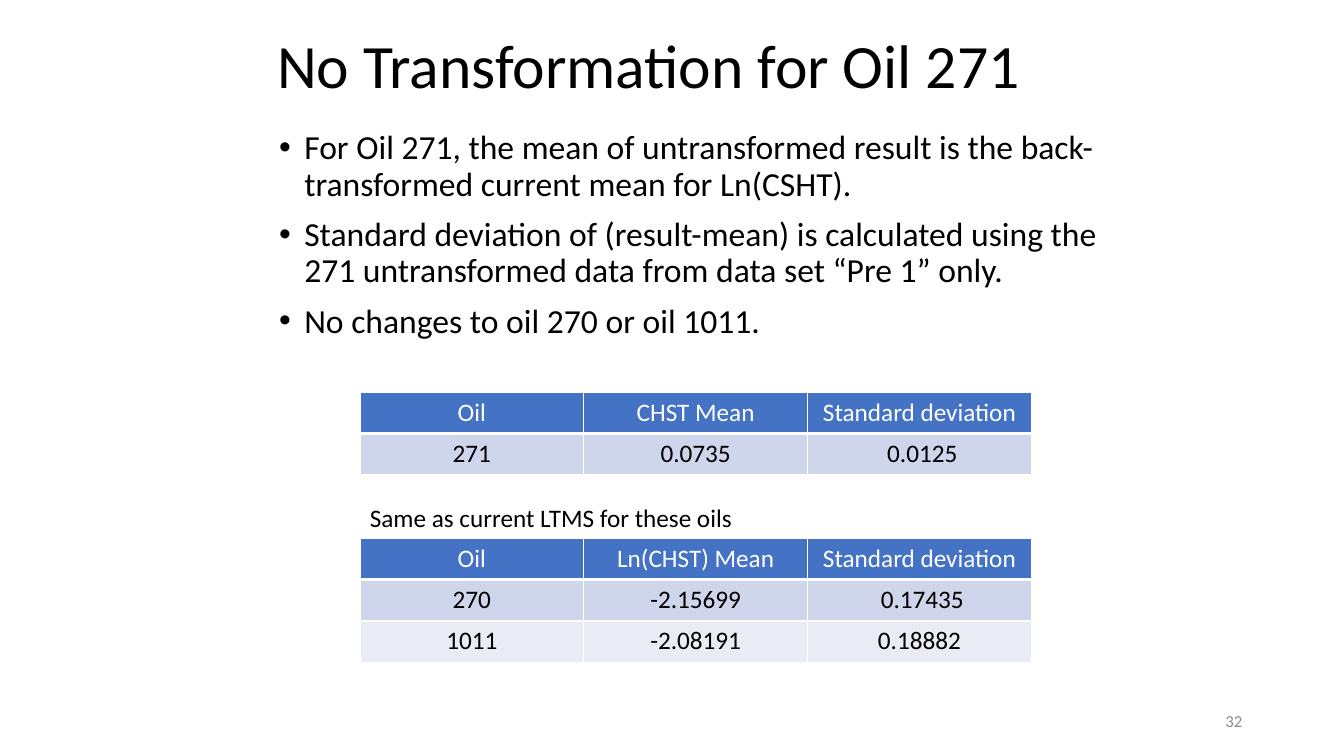
"""Build the slide on using no transformation for Oil 271."""
from lxml.etree import SubElement
from pptx import Presentation
from pptx.dml.color import RGBColor
from pptx.enum.text import MSO_ANCHOR, PP_ALIGN
from pptx.oxml.ns import qn
from pptx.util import Inches, Pt

BLACK, WHITE, GRAY = "000000", "FFFFFF", "8C8C8C"
HEADER_FILL, BAND_FILLS = "4472C4", ("CFD5EA", "E9EBF5")
TABLE_LEFT, COLUMN_WIDTH, ROW_HEIGHT = 3.57, 2.22, 0.41


def style_text(text_frame, size, color, alignment=PP_ALIGN.LEFT):
    for paragraph in text_frame.paragraphs:
        paragraph.alignment = alignment
        for run in paragraph.runs:
            run.font.name = "Calibri"
            run.font.size = Pt(size)
            run.font.bold = False
            run.font.color.rgb = RGBColor.from_string(color)


def add_text(slide, text, box, size, color=BLACK, alignment=PP_ALIGN.LEFT, anchor=MSO_ANCHOR.TOP):
    text_frame = slide.shapes.add_textbox(*map(Inches, box)).text_frame
    text_frame.word_wrap = True
    text_frame.vertical_anchor = anchor
    text_frame.text = text
    style_text(text_frame, size, color, alignment)
    return text_frame


presentation = Presentation()
presentation.slide_width = Inches(13.33)
presentation.slide_height = Inches(7.5)
slide = presentation.slides.add_slide(presentation.slide_layouts[6])

title = add_text(slide, "No Transformation for Oil 271", (2.65, 0.25, 8.5, 0.87), 44,
                 anchor=MSO_ANCHOR.MIDDLE)
title.paragraphs[0].line_spacing = 0.9
add_text(slide, "32", (9.42, 6.95, 3, 0.4), 12, GRAY, PP_ALIGN.RIGHT, MSO_ANCHOR.MIDDLE)

points = [
    "For Oil 271, the mean of untransformed result is the back-transformed current mean for Ln(CSHT).",
    "Standard deviation of (result-mean) is calculated using the 271 untransformed data "
    "from data set “Pre 1” only.",
    "No changes to oil 270 or oil 1011.",
]
body = add_text(slide, "\n".join(points), (2.67, 1.25, 8.5, 5), 24)
for paragraph in body.paragraphs:
    paragraph.line_spacing = 0.9
    paragraph.space_before = Pt(10)
    properties = paragraph._p.get_or_add_pPr()
    properties.set("marL", str(Inches(0.25)))
    properties.set("indent", str(Inches(-0.25)))
    SubElement(properties, qn("a:buFont"), typeface="Arial")
    SubElement(properties, qn("a:buChar"), char="•")

tables = [
    (3.89, [("Oil", "CHST Mean", "Standard deviation"),
            ("271", "0.0735", " 0.0125")]),
    (5.34, [("Oil", "Ln(CHST) Mean", "Standard deviation"),
            ("270", "-2.15699", " 0.17435"),
            ("1011", "-2.08191", "0.18882")]),
]
for top, rows in tables:
    table = slide.shapes.add_table(
        len(rows), 3, Inches(TABLE_LEFT), Inches(top),
        Inches(3 * COLUMN_WIDTH), Inches(len(rows) * ROW_HEIGHT)).table
    for row_index, values in enumerate(rows):
        is_header = row_index == 0
        fill = HEADER_FILL if is_header else BAND_FILLS[(row_index - 1) % 2]
        for column_index, value in enumerate(values):
            cell = table.cell(row_index, column_index)
            cell.text = value
            style_text(cell.text_frame, 18, WHITE if is_header else BLACK, PP_ALIGN.CENTER)
            cell_properties = cell._tc.get_or_add_tcPr()
            for side in "LRTB":
                width = 3 if is_header and side == "B" else 1
                border = SubElement(cell_properties, qn(f"a:ln{side}"), w=str(Pt(width)))
                SubElement(SubElement(border, qn("a:solidFill")), qn("a:srgbClr"), val=WHITE)
            cell.fill.solid()
            cell.fill.fore_color.rgb = RGBColor.from_string(fill)

add_text(slide, "Same as current LTMS for these oils", (TABLE_LEFT, 4.93, 3.93, 0.4), 18)

presentation.save("out.pptx")
